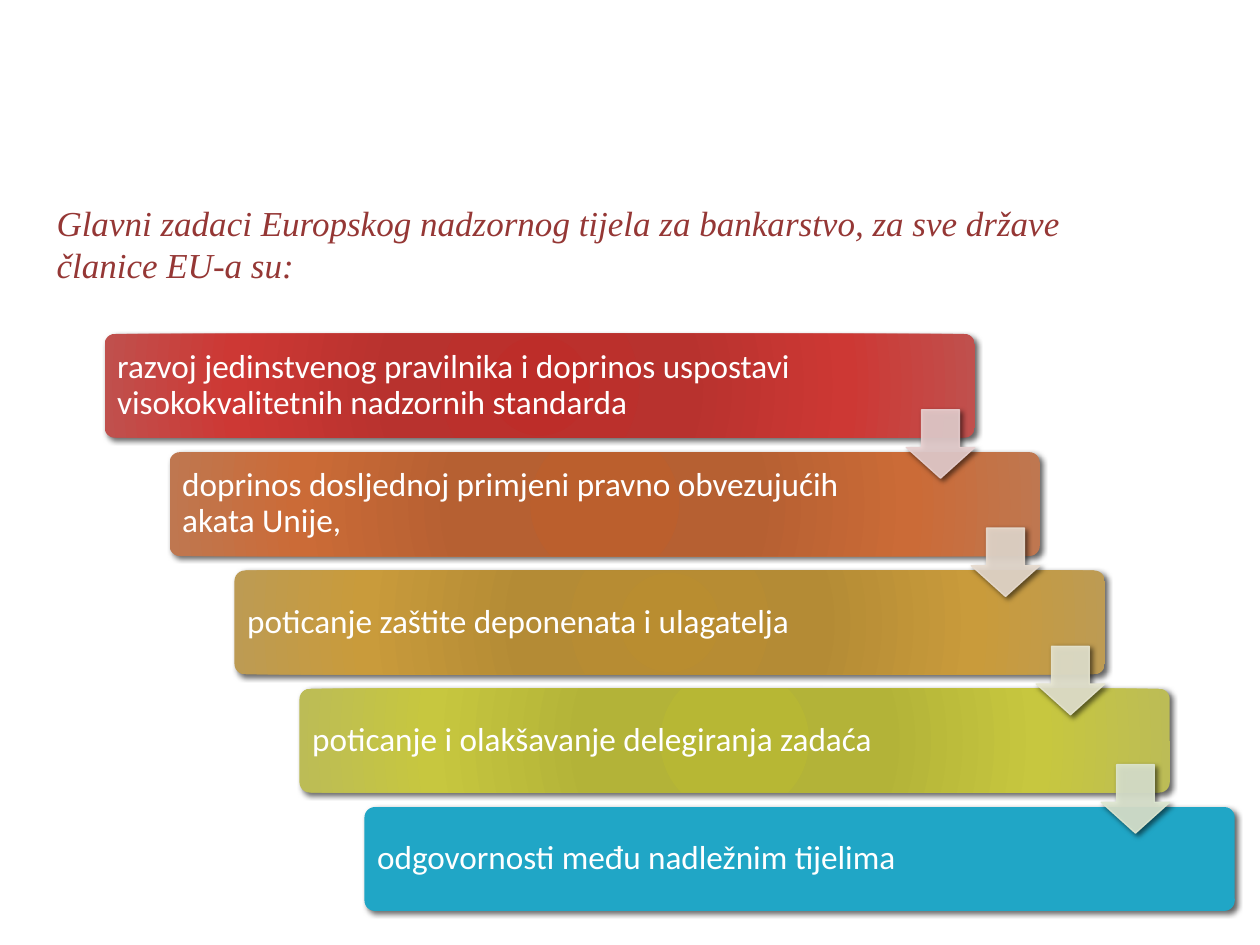
from lxml import etree
from pptx import Presentation
from pptx.dml.color import RGBColor
from pptx.enum.shapes import MSO_SHAPE
from pptx.enum.text import MSO_ANCHOR, MSO_AUTO_SIZE
from pptx.oxml.ns import qn
from pptx.util import Inches, Pt

BAR = MSO_SHAPE.ROUNDED_RECTANGLE
ARROW = MSO_SHAPE.DOWN_ARROW
MIDDLE = MSO_ANCHOR.MIDDLE
GROW = MSO_AUTO_SIZE.SHAPE_TO_FIT_TEXT

WIDE, HIGH = 10, 7.5
STOPS = (0, 34, 70, 100)
TITLE = "Glavni zadaci Europskog nadzornog tijela za bankarstvo, za sve države članice EU‑a su:"
STEPS = [
    ("razvoj jedinstvenog pravilnika i doprinos uspostavi visokokvalitetnih nadzornih standarda",
     ("BD2D29", "B8322E", "CD3834", "C0504D"), "E8D0D0"),
    ("doprinos dosljednoj primjeni pravno obvezujućih akata Unije,",
     ("BB5F2D", "B66032", "CB6B37", "BF7750"), "E8DCD0"),
    ("poticanje zaštite deponenata i ulagatelja",
     ("B98D30", "B48B35", "C99B3B", "BD9B53"), "E7E6D1"),
    ("poticanje i olakšavanje delegiranja zadaća",
     ("B7B734", "B3B338", "C7C73F", "BCBC56"), "DEE7D1"),
    ("odgovornosti među nadležnim tijelima", ("20A6C6",), None),
]


def color(code):
    return RGBColor.from_string(code)


def node(parent, tag, **attrs):
    return etree.SubElement(parent, qn("a:" + tag), {k: str(v) for k, v in attrs.items()})


def shade(shape):
    shape.shadow.inherit = False
    effect = shape._element.spPr.find(qn("a:effectLst"))
    cast = node(effect, "outerShdw", blurRad=Pt(3), dist=Pt(2), dir=45 * 60000,
                algn="tl", rotWithShape=0)
    tint = node(cast, "srgbClr", val="000000")
    node(tint, "alpha", val=60000)


def glow(shape, codes):
    shape.fill.background()
    props = shape._element.spPr
    blank = props.find(qn("a:noFill"))
    grad = etree.Element(qn("a:gradFill"), rotWithShape="1")
    stops = node(grad, "gsLst")
    for place, code in zip(STOPS, codes):
        stop = node(stops, "gs", pos=place * 1000)
        node(stop, "srgbClr", val=code)
    path = node(grad, "path", path="circle")
    node(path, "fillToRect", l=100000, t=100000, r=100000, b=100000)
    props.replace(blank, grad)


def draw(slide, kind, box, ratios):
    shape = slide.shapes.add_shape(kind, *map(Inches, box))
    for i, ratio in enumerate(ratios):
        shape.adjustments[i] = ratio
    shade(shape)
    return shape


def write(slide, box, words, font, size, code):
    frame = slide.shapes.add_textbox(*map(Inches, box)).text_frame
    frame.word_wrap = True
    run = frame.paragraphs[0].add_run()
    run.text = words
    run.font.name = font
    run.font.size = Pt(size)
    run.font.color.rgb = color(code)
    return frame


def heading(slide, box):
    frame = write(slide, box, TITLE, "Times New Roman", 20, "953735")
    frame.auto_size = GROW
    frame.paragraphs[0].runs[0].font.italic = True


def step(slide, box, words, codes, span):
    left, top, width, height = box
    bar = draw(slide, BAR, box, [0.1])
    bar.line.fill.background()
    if len(codes) > 1:
        glow(bar, codes)
    else:
        bar.fill.solid()
        bar.fill.fore_color.rgb = color(codes[0])
    pad = 0.02
    frame = write(slide, (left + pad, top + pad, width * span, height - 2 * pad),
                  words, "Calibri", 19, "FFFFFF")
    frame.vertical_anchor = MIDDLE
    frame.margin_left = frame.margin_right = Inches(0.08)
    frame.margin_top = frame.margin_bottom = Inches(0.08)
    frame.paragraphs[0].line_spacing = 0.9


def arrow(slide, box, code):
    left, top, width, height = box
    side = height * 0.66
    shape = draw(slide, ARROW, (left + width - side, top + height * 0.73, side, side),
                 [0.55, 0.45])
    shape.fill.solid()
    shape.fill.fore_color.rgb = color(code)
    shape.line.color.rgb = color(code)
    shape.line.width = Pt(0.75)
    for tint in shape._element.spPr.findall(".//" + qn("a:solidFill") + "/" + qn("a:srgbClr")):
        node(tint, "alpha", val=90000)


def stairs(slide, box):
    left, top, width, height = box
    bar_w, bar_h = width * 0.77, height * 0.18
    last = len(STEPS) - 1
    right, down = (width - bar_w) / last, (height - bar_h) / last
    cells = [(left + i * right, top + i * down, bar_w, bar_h) for i in range(len(STEPS))]
    for i, (cell, (words, codes, _)) in enumerate(zip(cells, STEPS)):
        step(slide, cell, words, codes, 0.84 if i else 0.86)
    for cell, (_, _, code) in zip(cells, STEPS[:-1]):
        arrow(slide, cell, code)


def main():
    deck = Presentation()
    deck.slide_width, deck.slide_height = Inches(WIDE), Inches(HIGH)
    slide = deck.slides.add_slide(deck.slide_layouts[6])
    stairs(slide, (0.83, 2.65, 8.97, 4.58))
    heading(slide, (0.35, 1.55, 8.98, 0.77))
    deck.save("out.pptx")


if __name__ == "__main__":
    main()
